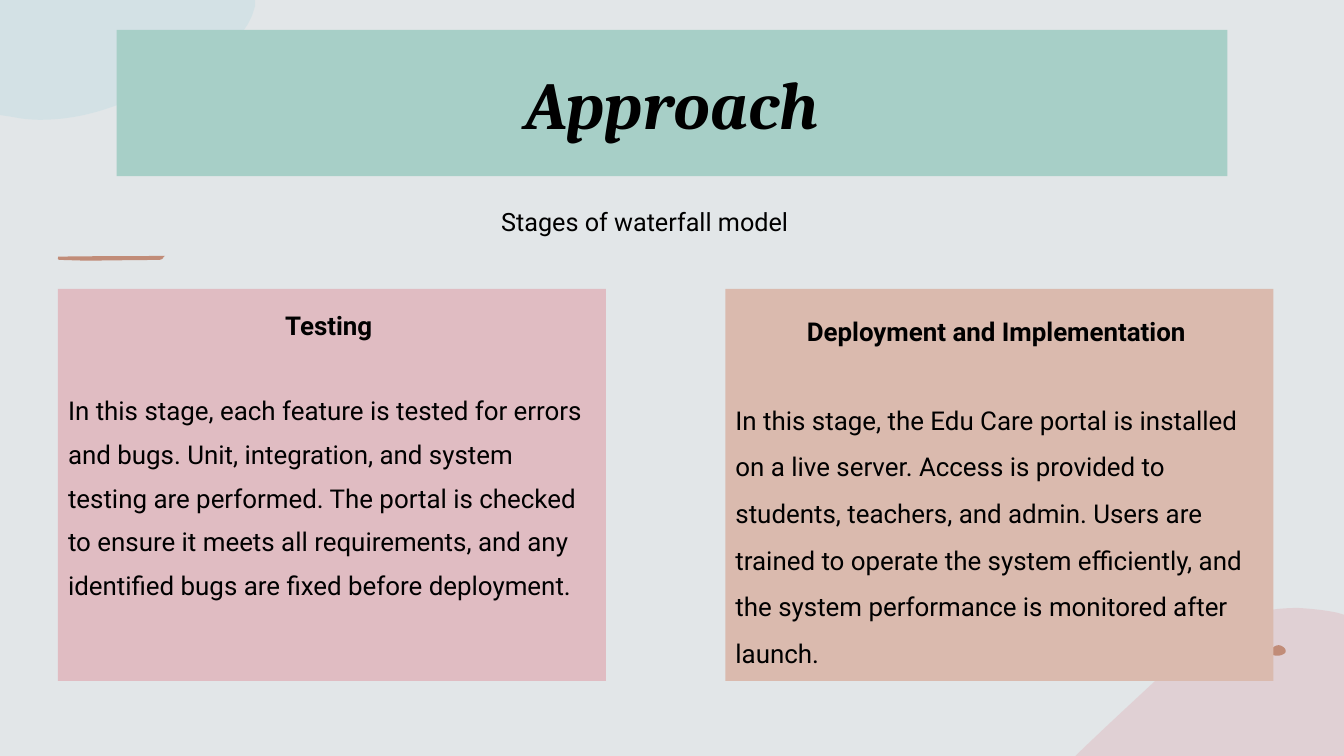
from pptx import Presentation
from pptx import util as u
from pptx.dml.color import RGBColor
from pptx.enum import text
from pptx.oxml import parse_xml
from pptx.oxml.ns import nsdecls

BACKGROUND = RGBColor(0xE2, 0xE6, 0xE8)
TEAL = RGBColor(0xA7, 0xCF, 0xC7)
PINK = RGBColor(0xE0, 0xBC, 0xC2)
SAND = RGBColor(0xDA, 0xBA, 0xAE)
PALE_BLUE = RGBColor(0xC6, 0xDE, 0xE4)
BROWN = RGBColor(0xC1, 0x8C, 0x78)
BLACK = RGBColor(0, 0, 0)

CENTER = text.PP_ALIGN.CENTER
LEFT = text.PP_ALIGN.LEFT
TITLE_FONT = {"name": "Cambria", "size": u.Pt(48), "bold": True, "italic": True}
HEADING_FONT = {"name": "Roboto", "size": u.Pt(18.5), "bold": True}
BODY_FONT = {"name": "Roboto", "size": u.Pt(18.5), "bold": False}
SUBTITLE_FONT = {"name": "Roboto", "size": u.Pt(18)}

# Outlines in cm from their own corner: two numbers make a line, six a curve
CORNER_BLOB = [(5.61, 0), (5.94, .02, 6.27, .05, 6.6, .12), (6.77, .17),
               (6.77, 3.73), (0, 3.73), (.89, 2.87, 1.78, 2.06, 2.59, 1.3),
               (3.15, .74, 3.73, .41, 4.32, .2), (4.75, .05, 5.18, 0, 5.61, 0)]
TOP_BLOB = [(0, 0), (6.43, 0), (6.43, .15), (6.22, 1.12, 5.08, 1.7, 4.01, 2.18),
            (3.12, 2.62, 2.18, 3.02, 1.04, 3.02), (.79, 3.02, .56, 3, .33, 2.95),
            (0, 2.9)]
DOT = [(.2, 0), (.25, 0, .33, .05, .36, .1), (.38, .15, .38, .2, .3, .23),
       (.23, .28, .03, .28, 0, .2), (-.03, .15, 0, .1, .03, .08),
       (.08, .03, .13, 0, .2, 0)]
DASH = [(0, .02), (.43, .01), (2.69, 0), (2.62, .03, 2.67, .1, 2.51, .1),
        (1.5, .11), (.71, .12), (.05, .1), (-.03, .1, -.01, .05, 0, .02)]


def set_attributes(target, values):
    for name, value in values.items():
        setattr(target, name, value)


def trace(outline, steps=12):
    """Turn lines and cubic curves into a list of points."""
    points = [outline[0]]
    for segment in outline[1:]:
        if len(segment) == 2:
            points.append(segment)
            continue
        x0, y0 = points[-1]
        x1, y1, x2, y2, x3, y3 = segment
        for step in range(1, steps + 1):
            t = step / steps
            a, b, c, d = (1 - t)**3, 3 * t * (1 - t)**2, 3 * t**2 * (1 - t), t**3
            points.append((a * x0 + b * x1 + c * x2 + d * x3,
                           a * y0 + b * y1 + c * y2 + d * y3))
    return points


def add_decoration(slide, corner, outline, color, opacity=100):
    left, top = corner
    points = [(u.Cm(left + x), u.Cm(top + y)) for x, y in trace(outline)]
    builder = slide.shapes.build_freeform(*points[0])
    builder.add_line_segments(points[1:], close=True)
    shape = builder.convert_to_shape()
    shape.shadow.inherit = False
    shape.fill.solid()
    shape.fill.fore_color.rgb = color
    shape.line.fill.background()
    if opacity < 100:
        shape.fill._xPr.find(".//{*}srgbClr").append(
            parse_xml(f'<a:alpha {nsdecls("a")} val="{opacity * 1000}"/>'))


def place(shape, box):
    for name, length in zip(("left", "top", "width", "height"), box):
        setattr(shape, name, u.Cm(length))


def fill_placeholder(slide, shape, box, color):
    place(shape, box)
    shape.fill.solid()
    shape.fill.fore_color.rgb = color
    slide.shapes._spTree.append(shape._element)  # in front of the decorations
    set_attributes(shape.text_frame, {"word_wrap": True,
                                      "auto_size": text.MSO_AUTO_SIZE.NONE})


def write(paragraph, words, font, **layout):
    run = paragraph.add_run()
    run.text = words
    set_attributes(run.font, font)
    run.font.color.rgb = BLACK
    set_attributes(paragraph, layout)


def add_title(slide, box):
    title = slide.shapes.title
    fill_placeholder(slide, title, box, TEAL)
    title.text_frame.vertical_anchor = text.MSO_ANCHOR.MIDDLE
    write(title.text_frame.paragraphs[0], "Approach", TITLE_FONT, alignment=CENTER)


def add_subtitle(slide, box):
    subtitle = slide.shapes.add_textbox(0, 0, 0, 0)
    place(subtitle, box)
    subtitle.text_frame.word_wrap = True
    write(subtitle.text_frame.paragraphs[0], "Stages of waterfall model",
          SUBTITLE_FONT, alignment=CENTER)


def add_stage(slide, index, box, color, inset, heading, body, spacing):
    stage = slide.placeholders[index]
    fill_placeholder(slide, stage, box, color)
    frame = stage.text_frame
    set_attributes(frame, {"vertical_anchor": text.MSO_ANCHOR.TOP,
                           "margin_top": u.Cm(inset)})
    write(frame.paragraphs[0], heading, HEADING_FONT, alignment=CENTER,
          space_before=u.Pt(0))
    write(frame.add_paragraph(), body, BODY_FONT, alignment=LEFT,
          space_before=u.Pt(30), line_spacing=spacing)
    for paragraph in frame.paragraphs:
        properties = paragraph._p.get_or_add_pPr()
        properties.set("marL", "0")
        properties.set("indent", "0")
        properties.append(parse_xml(f'<a:buNone {nsdecls("a")}/>'))


def add_approach_slide(presentation):
    slide = presentation.slides.add_slide(presentation.slide_layouts[3])
    slide.background.fill.solid()
    slide.background.fill.fore_color.rgb = BACKGROUND

    # Decorations
    add_decoration(slide, (27.1, 15.32), CORNER_BLOB, PINK, 50)
    add_decoration(slide, (32.03, 16.26), DOT, BROWN)
    add_decoration(slide, (0, 0), TOP_BLOB, PALE_BLUE, 50)
    add_decoration(slide, (1.47, 6.45), DASH, BROWN)

    # Title band and the two stages
    add_title(slide, (2.94, 0.75, 27.99, 3.69))
    add_stage(slide, 1, (1.46, 7.28, 13.81, 9.88), PINK, 0.52, "Testing ",
              "In this stage, each feature is tested for errors and bugs. "
              "Unit, integration, and system testing are performed. The portal "
              "is checked to ensure it meets all requirements, and any "
              "identified bugs are fixed before deployment.", 1.4)
    add_stage(slide, 2, (18.28, 7.28, 13.81, 9.88), SAND, 0.67,
              "Deployment and Implementation ",
              "In this stage, the Edu Care portal is installed on a live server. "
              "Access is provided to students, teachers, and admin. Users are "
              "trained to operate the system efficiently, and the system "
              "performance is monitored after launch.", 1.5)
    add_subtitle(slide, (5.33, 5.08, 21.84, 1.02))


def main():
    presentation = Presentation()
    presentation.slide_width = u.Cm(33.87)
    presentation.slide_height = u.Cm(19.05)
    add_approach_slide(presentation)
    presentation.save("out.pptx")


if __name__ == "__main__":
    main()
